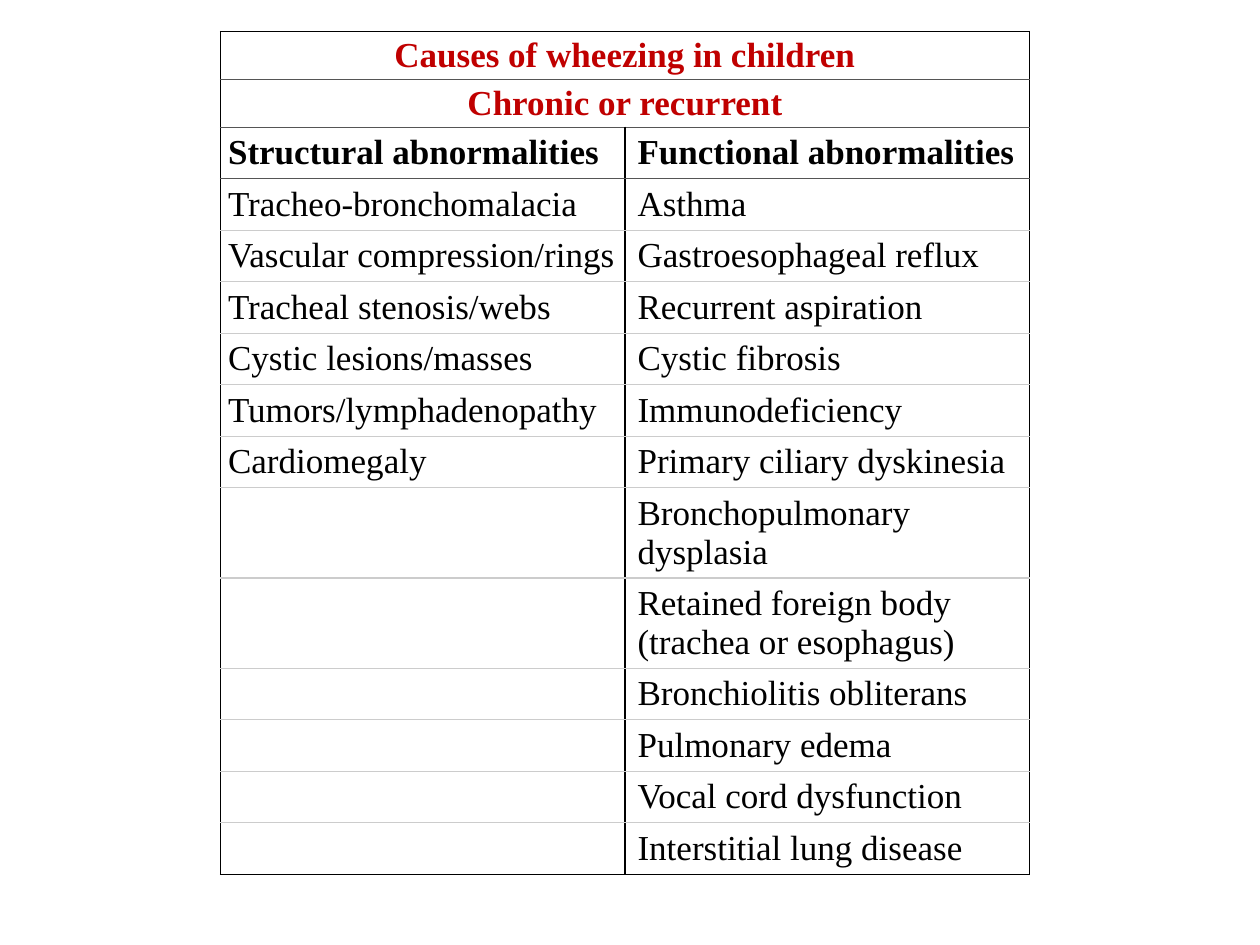
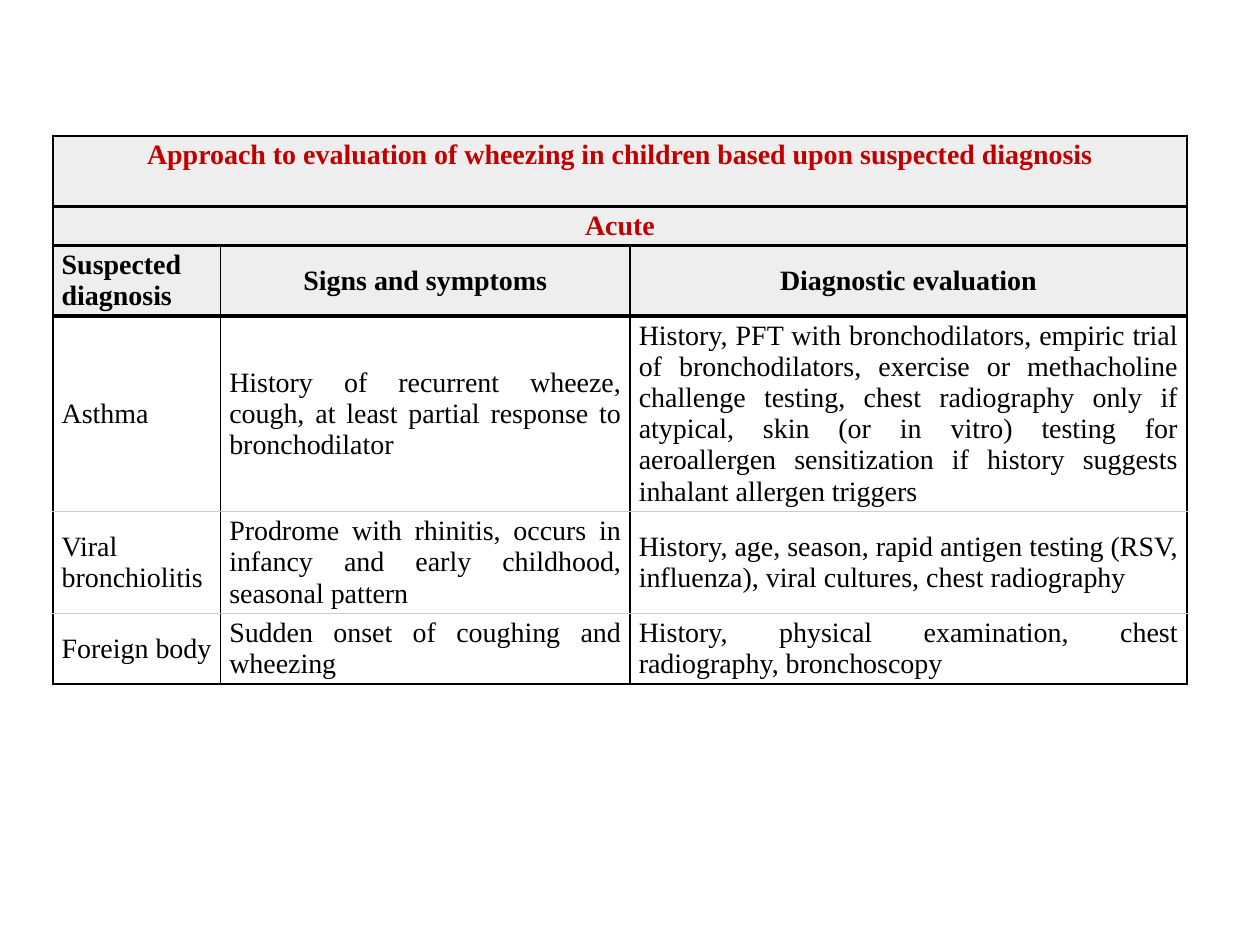
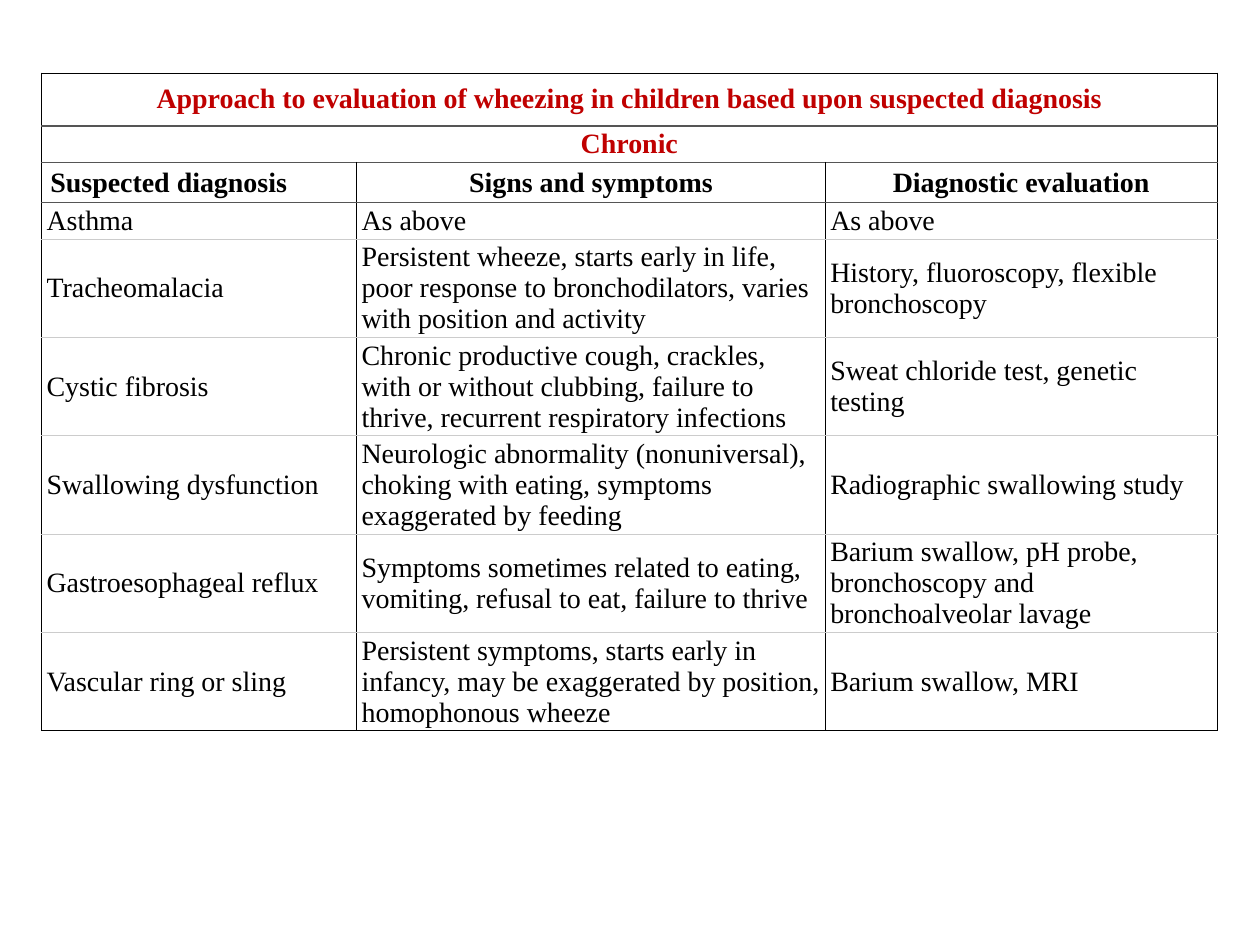
from dataclasses import dataclass

from lxml import etree
from pptx import Presentation
from pptx.dml.color import RGBColor
from pptx.enum.text import MSO_ANCHOR, PP_ALIGN
from pptx.oxml.ns import qn
from pptx.util import Inches, Pt

LEFT, MID, JUST = PP_ALIGN.LEFT, PP_ALIGN.CENTER, PP_ALIGN.JUSTIFY
TOP, MIDDLE = MSO_ANCHOR.TOP, MSO_ANCHOR.MIDDLE

BLACK = RGBColor(0x00, 0x00, 0x00)
WHITE = RGBColor(0xFF, 0xFF, 0xFF)
RED = RGBColor(0xC0, 0x00, 0x00)
DARK = RGBColor(0x55, 0x55, 0x55)
PALE = RGBColor(0xCC, 0xCC, 0xCC)
GREY = RGBColor(0xEE, 0xEE, 0xEE)

FONT = "Times New Roman"
BANDS = 2   # full-width title rows
HEADS = 3   # title rows and the column heads
THIN = 0.75
TOPIC = "Approach to evaluation of wheezing in children based upon suspected diagnosis"
COLUMNS = ("Suspected diagnosis", "Signs and symptoms", "Diagnostic evaluation")

STRUCTURAL = (
    "Structural abnormalities", "Tracheo-bronchomalacia", "Vascular compression/rings",
    "Tracheal stenosis/webs", "Cystic lesions/masses", "Tumors/lymphadenopathy",
    "Cardiomegaly", "", "", "", "", "", "",
)
FUNCTIONAL = (
    "Functional abnormalities", "Asthma", "Gastroesophageal reflux",
    "Recurrent aspiration", "Cystic fibrosis", "Immunodeficiency",
    "Primary ciliary dyskinesia", "Bronchopulmonary dysplasia",
    "Retained foreign body (trachea or esophagus)", "Bronchiolitis obliterans",
    "Pulmonary edema", "Vocal cord dysfunction", "Interstitial lung disease",
)
ACUTE = (
    COLUMNS,
    ("Asthma",
     "History of recurrent wheeze, cough, at least partial response to bronchodilator",
     "History, PFT with bronchodilators, empiric trial of bronchodilators, exercise or "
     "methacholine challenge testing, chest radiography only if atypical, skin (or in "
     "vitro) testing for aeroallergen sensitization if history suggests inhalant "
     "allergen triggers"),
    ("Viral bronchiolitis",
     "Prodrome with rhinitis, occurs in infancy and early childhood, seasonal pattern",
     "History, age, season, rapid antigen testing (RSV, influenza), viral cultures, "
     "chest radiography"),
    ("Foreign body",
     "Sudden onset of coughing and wheezing",
     "History, physical examination, chest radiography, bronchoscopy"),
)
CHRONIC = (
    COLUMNS,
    ("Asthma", "As above", "As above"),
    ("Tracheomalacia",
     "Persistent wheeze, starts early in life, poor response to bronchodilators, "
     "varies with position and activity",
     "History, fluoroscopy, flexible bronchoscopy"),
    ("Cystic fibrosis",
     "Chronic productive cough, crackles, with or without clubbing, failure to thrive, "
     "recurrent respiratory infections",
     "Sweat chloride test, genetic testing"),
    ("Swallowing dysfunction",
     "Neurologic abnormality (nonuniversal), choking with eating, symptoms "
     "exaggerated by feeding",
     "Radiographic swallowing study"),
    ("Gastroesophageal reflux",
     "Symptoms sometimes related to eating, vomiting, refusal to eat, failure to thrive",
     "Barium swallow, pH probe, bronchoscopy and bronchoalveolar lavage"),
    ("Vascular ring or sling",
     "Persistent symptoms, starts early in infancy, may be exaggerated by position, "
     "homophonous wheeze",
     "Barium swallow, MRI"),
)


@dataclass
class Look:
    """Text size, border lines, fills and paddings of one table."""
    size: int
    edge: float = THIN
    rule: tuple = (DARK, THIN)
    head: RGBColor = WHITE
    body: RGBColor = WHITE
    align: PP_ALIGN = LEFT
    heads: PP_ALIGN = MID
    anchor: MSO_ANCHOR = MIDDLE
    pads: tuple = ((0.07, 0.03),) * 3   # bands, column heads, body
    last: tuple = ()                    # padding of the last column


def add_line(cell, side, color, width):
    line = etree.SubElement(cell._tc.get_or_add_tcPr(), qn(f"a:ln{side}"),
                            w=str(Pt(width)))
    fill = etree.SubElement(line, qn("a:solidFill"))
    etree.SubElement(fill, qn("a:srgbClr"), val=str(color))


def frame_cell(cell, row, col, rows, cols, look):
    def across(i):
        if i in (0, rows):
            return BLACK, look.edge
        return look.rule if i <= HEADS else (PALE, THIN)

    def down(i):
        return BLACK, look.edge if i in (0, cols) or row < BANDS else THIN

    add_line(cell, "L", *down(col))
    add_line(cell, "R", *down(col + 1))
    add_line(cell, "T", *across(row))
    add_line(cell, "B", *across(row + 1))


def fill_cell(cell, text, row, col, cols, look):
    color = look.head if row < HEADS else look.body
    if color is None:
        cell.fill.background()
    else:
        cell.fill.solid()
        cell.fill.fore_color.rgb = color

    side, end = look.pads[max(0, min(row - BANDS + 1, 2))]
    if look.last and row >= BANDS and col == cols - 1:
        side, end = look.last
    cell.margin_left = cell.margin_right = Inches(side)
    cell.margin_top = cell.margin_bottom = Inches(end)
    cell.vertical_anchor = look.anchor if row == 0 else MIDDLE

    cell.text_frame.text = text
    para = cell.text_frame.paragraphs[0]
    if row < BANDS:
        para.alignment = MID
    elif col > 0:
        para.alignment = look.heads if row < HEADS else look.align
    for run in para.runs:
        font = run.font
        font.name, font.size = FONT, Pt(look.size)
        font.bold = row < HEADS
        font.color.rgb = RED if row < BANDS else BLACK


def add_grid(slide, spot, widths, heights, bands, body, look):
    """Place a table with full-width bands above its column heads and body."""
    rows, cols = len(heights), len(widths)
    left, top = spot
    table = slide.shapes.add_table(
        rows, cols, Inches(left), Inches(top),
        Inches(sum(widths)), Inches(sum(heights))).table
    table.first_row = table.horz_banding = False
    for column, width in zip(table.columns, widths):
        column.width = Inches(width)
    for line, height in zip(table.rows, heights):
        line.height = Inches(height)
    for row in range(BANDS):
        table.cell(row, 0).merge(table.cell(row, cols - 1))

    texts = [(band,) + ("",) * (cols - 1) for band in bands] + list(body)
    for row, line in enumerate(texts):
        for col, text in enumerate(line):
            cell = table.cell(row, col)
            frame_cell(cell, row, col, rows, cols, look)
            fill_cell(cell, text, row, col, cols, look)


def add_causes(slide):
    look = Look(20, edge=1, heads=LEFT, pads=((0.06, 0.03),) * 3, last=(0.1, 0.05))
    heights = [0.38] * 2 + [0.4] * 7 + [0.71] * 2 + [0.4] * 4
    add_grid(slide, (1.75, 0.25), [3.21] * 2, heights,
             ("Causes of wheezing in children", "Chronic or recurrent"),
             zip(STRUCTURAL, FUNCTIONAL), look)


def add_acute(slide):
    look = Look(16, edge=1, rule=(BLACK, 2.25), head=GREY, body=None,
                align=JUST, anchor=TOP)
    add_grid(slide, (0.42, 1.08), [1.33, 3.25, 4.42],
             [0.56, 0.31, 0.56, 1.55, 0.81, 0.56], (TOPIC, "Acute"), ACUTE, look)


def add_chronic(slide):
    look = Look(16, pads=((0.04, 0.02), (0.07, 0.03), (0.04, 0.02)))
    add_grid(slide, (0.33, 0.58), [2.5, 3.72, 3.11],
             [0.42, 0.29, 0.32, 0.29] + [0.78] * 5, (TOPIC, "Chronic"), CHRONIC, look)


def main():
    deck = Presentation()
    deck.slide_width, deck.slide_height = Inches(10), Inches(7.5)
    blank = deck.slide_layouts[6]
    for build in (add_causes, add_acute, add_chronic):
        build(deck.slides.add_slide(blank))
    deck.save("out.pptx")


if __name__ == "__main__":
    main()
